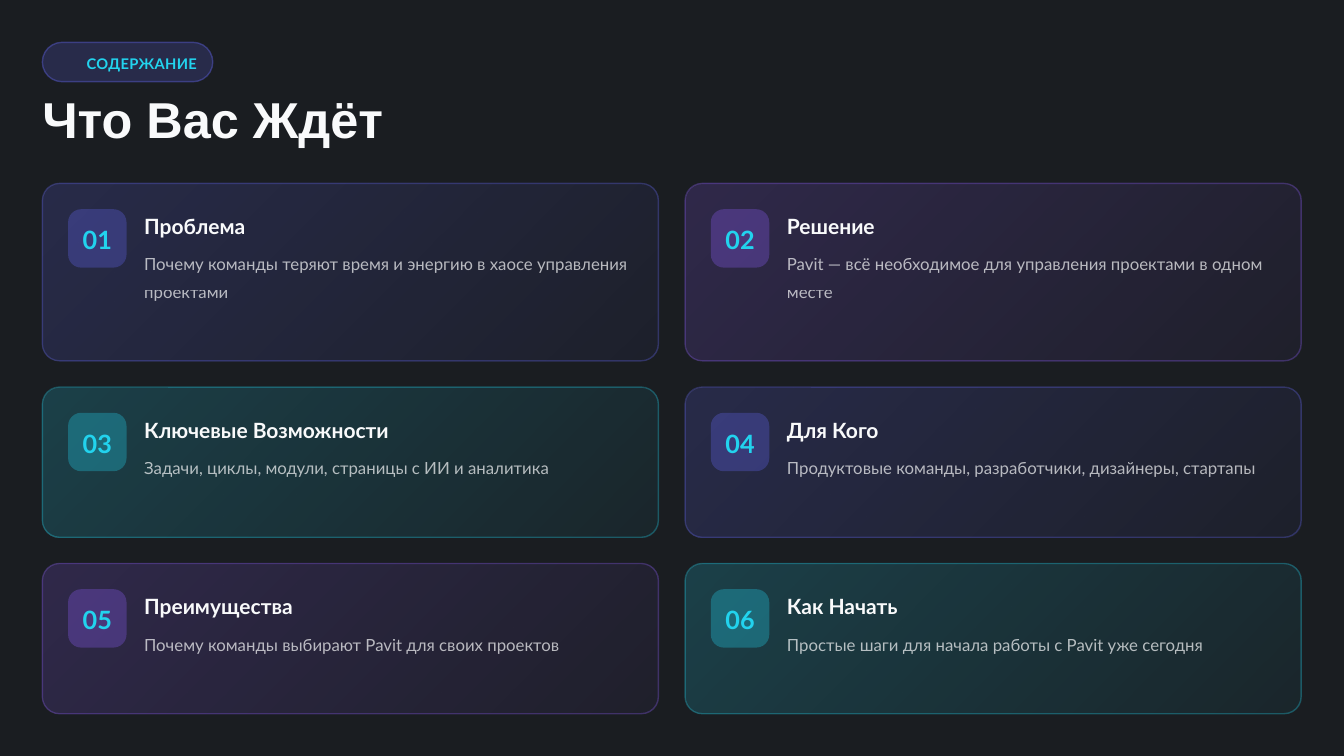
from dataclasses import dataclass

from lxml.etree import SubElement
from pptx import Presentation
from pptx.dml.color import RGBColor as Color
from pptx.enum.shapes import MSO_SHAPE as Preset
from pptx.enum.text import MSO_ANCHOR as Anchor, PP_ALIGN as Align
from pptx.oxml.ns import qn
from pptx.util import Inches, Pt


@dataclass(frozen=True)
class Theme:
    background: str = "1A1D21"
    text: str = "F9FAFB"
    indigo: str = "6366F1"
    violet: str = "8B5CF6"
    cyan: str = "22D3EE"
    heading_font: str = "Arial"
    body_font: str = "Lato"
    title_size: float = 36
    number_size: float = 18
    card_title_size: float = 15
    body_size: float = 12
    badge_size: float = 10.5


THEME = Theme()

# Grid of cards, in inches
MARGIN = 0.42
CARDS_TOP = 1.82
CARD_WIDTH = 6.11
GAP = 0.26
COLUMN_STEP = 6.375
PADDING = 0.255
TILE_SIZE = 0.58
TEXT_OFFSET = 1.01
TEXT_WIDTH = 4.95
BODY_OFFSET = 0.63
LINE_HEIGHT = 0.27
CARD_BASE_HEIGHT = 1.22

# Each row: number of body lines, then its cards (title, body, accent)
ROWS = [
    (2, [
        ("Проблема", "Почему команды теряют время и энергию в хаосе управления проектами", THEME.indigo),
        ("Решение", "Pavit — всё необходимое для управления проектами в одном месте", THEME.violet),
    ]),
    (1, [
        ("Ключевые Возможности", "Задачи, циклы, модули, страницы с ИИ и аналитика", THEME.cyan),
        ("Для Кого", "Продуктовые команды, разработчики, дизайнеры, стартапы", THEME.indigo),
    ]),
    (1, [
        ("Преимущества", "Почему команды выбирают Pavit для своих проектов", THEME.violet),
        ("Как Начать", "Простые шаги для начала работы с Pavit уже сегодня", THEME.cyan),
    ]),
]


def set_opacity(element, *percents):
    """Apply opacity to the colours inside an element, in document order."""
    for colour, percent in zip(element.iter(qn("a:srgbClr")), percents):
        SubElement(colour, qn("a:alpha")).set("val", str(percent * 1000))


def write_text(shape, text, size, color, spacing, font=THEME.body_font,
               bold=True, align=Align.LEFT):
    frame = shape.text_frame
    frame.word_wrap = True
    frame.vertical_anchor = Anchor.MIDDLE
    frame.margin_left = frame.margin_right = frame.margin_top = frame.margin_bottom = 0
    paragraph = frame.paragraphs[0]
    paragraph.text = text
    paragraph.alignment = align
    paragraph.line_spacing = spacing
    paragraph.font.name = font
    paragraph.font.size = Pt(size)
    paragraph.font.bold = bold
    paragraph.font.color.rgb = Color.from_string(color)
    return paragraph


def add_label(slide, left, top, width, height, *text_args, **text_options):
    box = slide.shapes.add_textbox(Inches(left), Inches(top), Inches(width), Inches(height))
    return write_text(box, *text_args, **text_options)


def add_panel(slide, left, top, width, height, radius, color, opacities,
              gradient=False, outlined=True):
    """Rounded panel; opacities list the fill colours first, then the line."""
    panel = slide.shapes.add_shape(Preset.ROUNDED_RECTANGLE, Inches(left), Inches(top),
                                   Inches(width), Inches(height))
    panel.adjustments[0] = radius / min(width, height)
    panel.shadow.inherit = False
    accent = Color.from_string(color)
    if gradient:
        panel.fill.gradient()
        panel.fill.gradient_angle = 315
        for stop in panel.fill.gradient_stops:
            stop.color.rgb = accent
    else:
        panel.fill.solid()
        panel.fill.fore_color.rgb = accent
    if outlined:
        panel.line.color.rgb = accent
        panel.line.width = Pt(1)
    else:
        panel.line.fill.background()
    set_opacity(panel.element.spPr, *opacities)
    return panel


def add_list_icon(slide, left, middle):
    """Three dots with three bars, as one outline."""
    builder = slide.shapes.build_freeform(left, middle, scale=Inches(1))
    for row in (-1, 0, 1):
        center = middle + row * 0.09 / 2
        for x, width, height in ((left, 0.03, 0.03), (left + 0.04, 0.1, 0.02)):
            top, bottom = center - height / 2, center + height / 2
            builder.move_to(x, top)
            builder.add_line_segments([(x + width, top), (x + width, bottom), (x, bottom)])
    icon = builder.convert_to_shape()
    icon.shadow.inherit = False
    icon.fill.solid()
    icon.fill.fore_color.rgb = Color.from_string(THEME.cyan)
    icon.line.fill.background()


def add_header(slide):
    add_panel(slide, MARGIN, 0.42, 1.69, 0.39, 0.195, THEME.indigo, (20, 40))
    add_list_icon(slide, 0.62, 0.61)
    badge = add_label(slide, 0.86, 0.51, 1.16, 0.21, "СОДЕРЖАНИЕ",
                      THEME.badge_size, THEME.cyan, 1.2)
    badge.font._element.set("spc", "30")
    add_label(slide, MARGIN, 0.98, 12.75, 0.5, "Что Вас Ждёт",
              THEME.title_size, THEME.text, 0.8, font=THEME.heading_font)


def add_card(slide, left, top, height, number, title, body, accent, body_lines):
    add_panel(slide, left, top, CARD_WIDTH, height, 0.17, accent, (20, 5, 30), gradient=True)
    # Number tile
    inner_top = top + PADDING
    tile = add_panel(slide, left + PADDING, inner_top, TILE_SIZE, TILE_SIZE, 0.13,
                     accent, (30,), outlined=False)
    write_text(tile, f"{number:02}", THEME.number_size, THEME.cyan, 1.1, align=Align.CENTER)
    # Title and description
    text_left = left + TEXT_OFFSET
    add_label(slide, text_left, inner_top, TEXT_WIDTH, 0.29, title,
              THEME.card_title_size, THEME.text, 1.2)
    description = add_label(slide, text_left, top + BODY_OFFSET, TEXT_WIDTH,
                            LINE_HEIGHT * body_lines, body,
                            THEME.body_size, THEME.text, 1.4, bold=False)
    set_opacity(description._p, 70)


def main():
    presentation = Presentation()
    presentation.slide_width = Inches(13.33)
    presentation.slide_height = Inches(7.5)
    slide = presentation.slides.add_slide(presentation.slide_layouts[6])
    slide.background.fill.solid()
    slide.background.fill.fore_color.rgb = Color.from_string(THEME.background)

    add_header(slide)

    # Cards, row by row
    top = CARDS_TOP
    number = 1
    for body_lines, cards in ROWS:
        height = CARD_BASE_HEIGHT + LINE_HEIGHT * body_lines
        for column, (title, body, accent) in enumerate(cards):
            add_card(slide, MARGIN + column * COLUMN_STEP, top, height,
                     number, title, body, accent, body_lines)
            number += 1
        top += height + GAP

    presentation.save("out.pptx")


if __name__ == "__main__":
    main()
